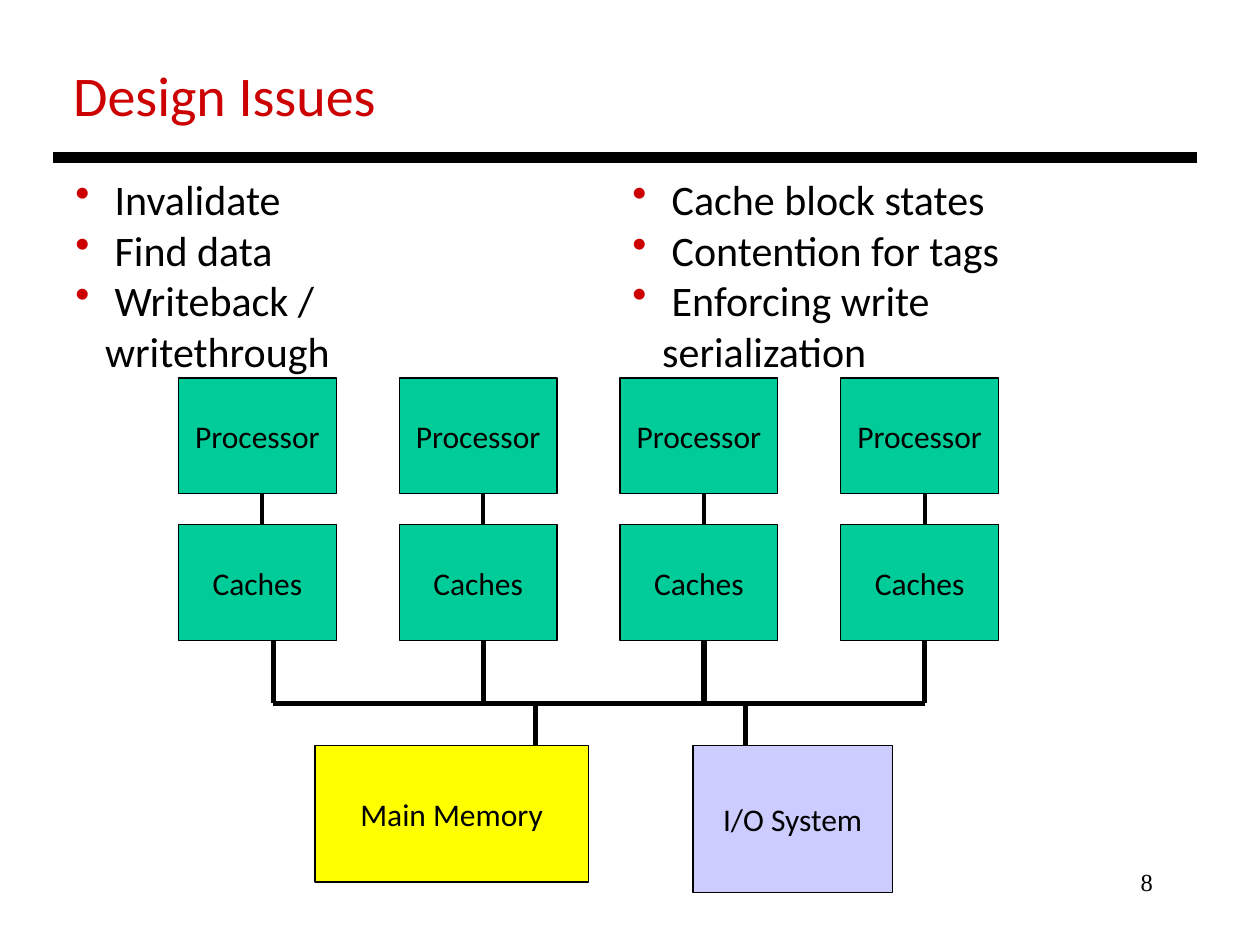
from pptx import Presentation
from pptx import util as u
from pptx.dml.color import RGBColor
from pptx.enum import shapes, text
from lxml import etree
from pptx.oxml import ns

Cm, Pt = u.Cm, u.Pt


def paint(target, color):
    if hasattr(target, "solid"):
        target.solid()
        target.fore_color.rgb = RGBColor.from_string(color)
    else:
        target.color.rgb = RGBColor.from_string(color)


def write(frame, lines, size, color="000000", font="Calibri", align=text.PP_ALIGN.LEFT):
    frame.text = "\n".join(lines)
    for paragraph in frame.paragraphs:
        paragraph.alignment = align
        run_font = paragraph.runs[0].font
        run_font.size, run_font.name = Pt(size), font
        paint(run_font, color)


deck = Presentation()
deck.slide_width, deck.slide_height = Cm(25.4), Cm(19.05)
slide = deck.slides.add_slide(deck.slide_layouts[5])

title = slide.shapes.title
title.left, title.top, title.width, title.height = Cm(1.22), Cm(1.09), Cm(6.68), Cm(1.63)
write(title.text_frame, ["Design Issues"], 32, "CC0000")
title.text_frame.word_wrap = False
title.text_frame.vertical_anchor = text.MSO_ANCHOR.TOP

page_number = slide.shapes.add_textbox(Cm(18.21), Cm(17.35), Cm(5.28), Cm(1.27))
page_number.text_frame.word_wrap = True
write(page_number.text_frame, ["8"], 14, font="Times New Roman", align=text.PP_ALIGN.RIGHT)

issue_columns = [
    (1.27, 9.96, [" Invalidate", " Find data", " Writeback / writethrough"]),
    (12.5, 10.74, [" Cache block states", " Contention for tags", " Enforcing write serialization"]),
]
for left, width, issues in issue_columns:
    column = slide.shapes.add_textbox(Cm(left), Cm(3.38), Cm(width), Cm(3.33))
    column.text_frame.word_wrap = True
    column.text_frame.margin_right = Cm(2.5)
    write(column.text_frame, issues, 24)
    for issue in column.text_frame.paragraphs:
        properties = issue._p.get_or_add_pPr()
        properties.set("marL", str(Cm(0.6)))
        properties.set("indent", str(-Cm(0.6)))
        bullet_color = etree.SubElement(properties, ns.qn("a:buClr"))
        etree.SubElement(bullet_color, ns.qn("a:srgbClr")).set("val", "CC0000")
        etree.SubElement(properties, ns.qn("a:buChar")).set("char", "•")

node_lefts = [3.6 + 4.45 * i for i in range(4)]
link_xs = [left + 1.69 for left in node_lefts]
processor_top, cache_top, node_width, node_height = 7.62, 10.58, 3.18, 2.33
cache_bottom, bus_y, device_top = cache_top + node_height, 14.18, 15.03
bus_left, bus_right = 5.51, link_xs[-1]

blocks = [("Main Memory", 6.35, device_top, 5.51, 2.75, "FFFF00"),
          ("I/O System", 13.97, device_top, 4.02, 2.96, "CCCCFF")]
for left in node_lefts:
    blocks.append(("Processor", left, processor_top, node_width, node_height, "00CC99"))
    blocks.append(("Caches", left, cache_top, node_width, node_height, "00CC99"))
for label, left, top, width, height, color in blocks:
    block = slide.shapes.add_shape(shapes.MSO_SHAPE.RECTANGLE, Cm(left), Cm(top), Cm(width), Cm(height))
    block.shadow.inherit = False
    paint(block.fill, color)
    paint(block.line, "000000")
    block.line.width = Pt(0.75)
    write(block.text_frame, [label], 18, align=text.PP_ALIGN.CENTER)
    block.text_frame.word_wrap = False
    block.text_frame.vertical_anchor = text.MSO_ANCHOR.MIDDLE

wires = [(1.06, 3.18, 24.13, 3.18, 6), (bus_left, bus_y, bus_right, bus_y, 3)]
wires += [(x, processor_top + node_height, x, cache_top, 2.25) for x in link_xs]
wires += [(x, cache_bottom, x, bus_y, 3) for x in [bus_left] + link_xs[1:]]
wires += [(x, bus_y, x, device_top, 3) for x in (10.8, 15.03)]
for x1, y1, x2, y2, weight in wires:
    wire = slide.shapes.add_connector(shapes.MSO_CONNECTOR.STRAIGHT, Cm(x1), Cm(y1), Cm(x2), Cm(y2))
    paint(wire.line, "000000")
    wire.line.width = Pt(weight)
    etree.SubElement(wire._element.spPr, ns.qn("a:effectLst"))

deck.save("out.pptx")
